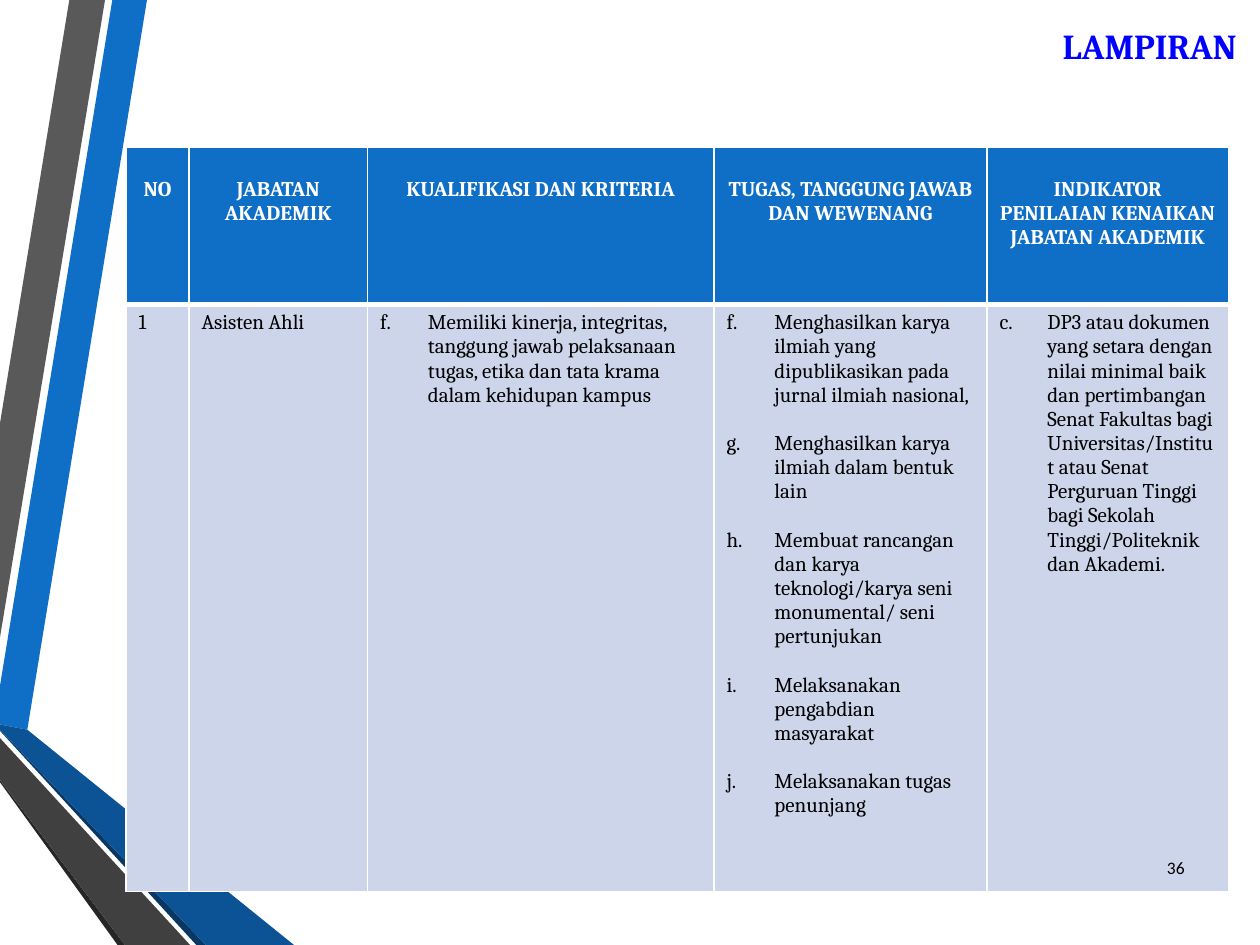
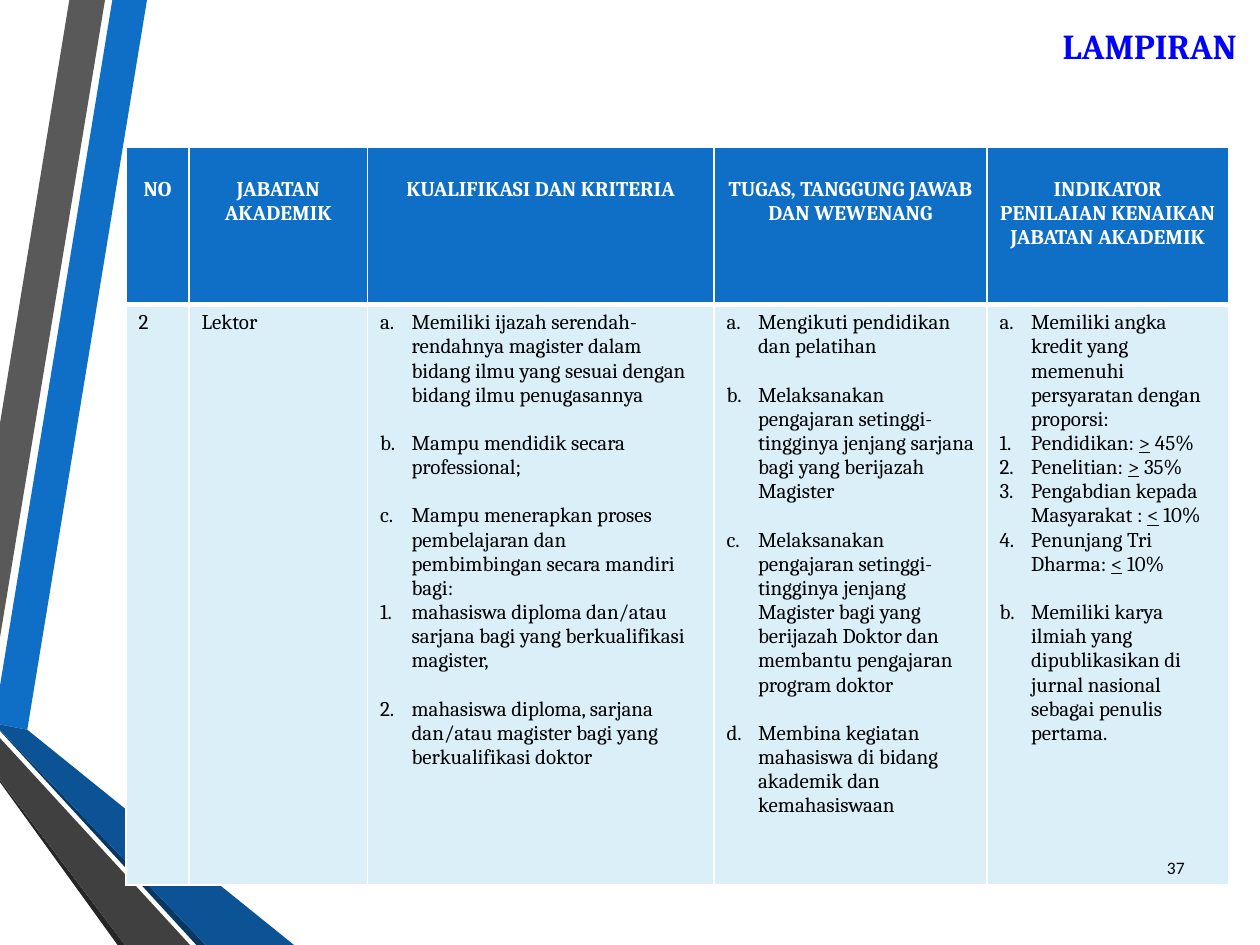
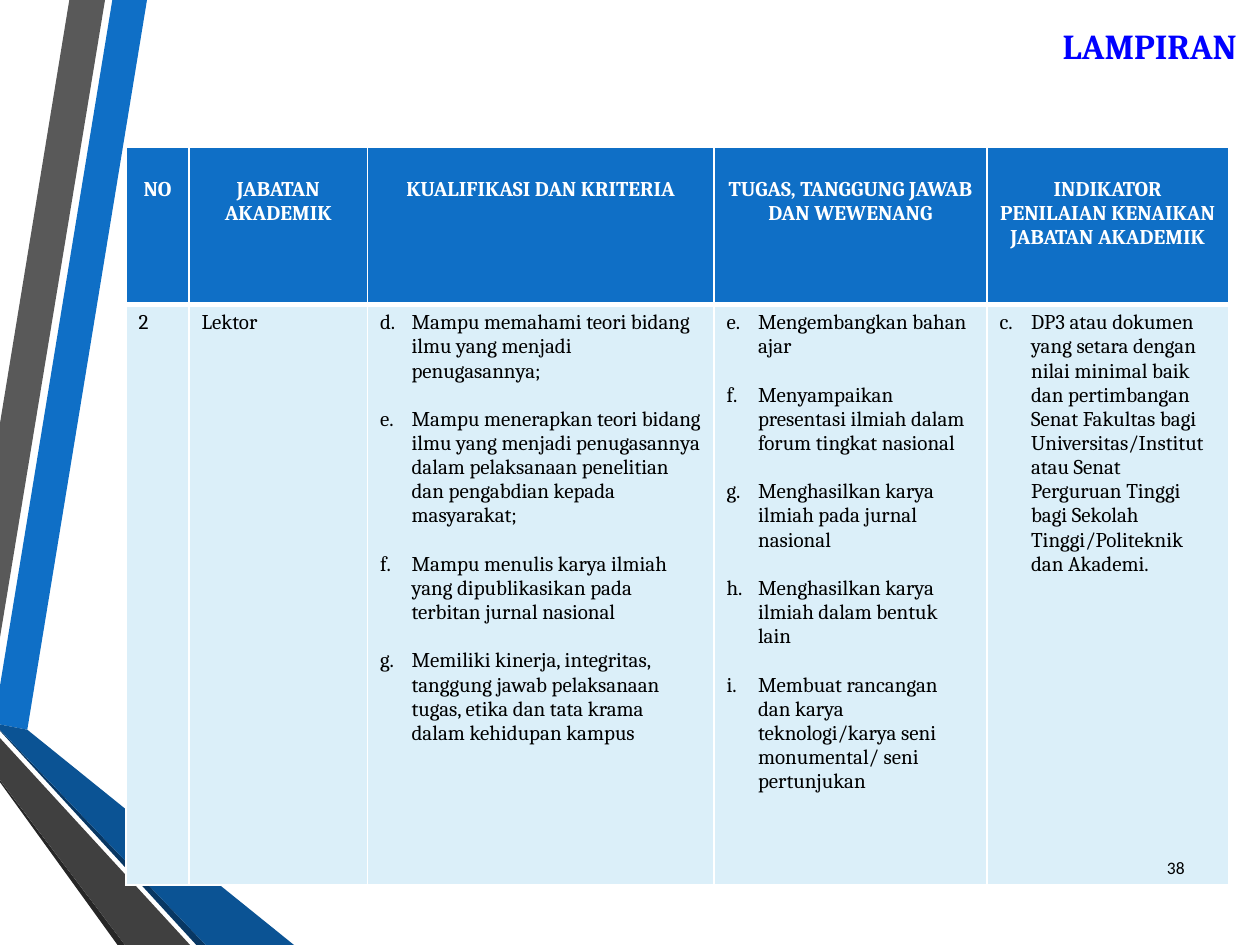
from dataclasses import dataclass

from lxml import etree
from pptx import Presentation, util as u
from pptx.dml.color import RGBColor
from pptx.enum import text
from pptx.oxml import ns

# Grid: 120 columns by 90 rows
COLUMNS, ROWS = 120, 90
SERIF, SANS = "Cambria", "Calibri"
BLUE, WHITE, BLACK, TITLE_BLUE = "0F6FC6", "FFFFFF", "000000", "0000FF"
ASSISTANT_FILL, LECTURER_FILL = "CCD5EA", "DBEFF9"
LINE_GAP = u.Pt(13.8)
CELL_MARGIN, HEADER_MARGIN = u.Inches(0.05), u.Inches(0.24)
CENTER, RIGHT = text.PP_ALIGN.CENTER, text.PP_ALIGN.RIGHT

# Ribbons on the left edge: colour and outline in grid units
RIBBONS = [
    (BLUE, [(0, 65.3), (0, 69), (2.6, 69.5), (14, 0), (10.7, 0)]),
    ("595959", [(10, 0), (6.6, 0), (0, 40.3), (0, 60.7)]),
    ("262626", [(0, 74.3), (0, 74.5), (11.2, 90), (11.9, 90)]),
    ("083763", [(0, 69.5), (0, 69.6), (18.7, 90), (19.6, 90)]),
    ("0B5394", [(0, 69.5), (19.6, 90), (28, 90), (2.6, 69.5), (0, 69)]),
    ("404040", [(0, 74.3), (11.9, 90), (18.1, 90), (0, 70.3)]),
]

TABLE_LEFT, TABLE_TOP, HEADER_ROWS = 12, 14, 15
TABLE_COLUMNS = [6, 17, 33, 26, 23]
HEADERS = [
    "NO", "JABATAN AKADEMIK", "KUALIFIKASI DAN KRITERIA",
    "TUGAS, TANGGUNG JAWAB DAN WEWENANG",
    "INDIKATOR PENILAIAN KENAIKAN JABATAN AKADEMIK",
]


@dataclass
class Numbered:
    """A numbered list; text between underscores is underlined."""
    items: list
    start: int = 1
    scheme: str = "alphaLcPeriod"
    apart: bool = True
    gap_before: bool = False


def color(value):
    return RGBColor.from_string(value)


class Deck:
    def __init__(self):
        self.presentation = Presentation()
        self.presentation.slide_width = u.Inches(10)
        self.presentation.slide_height = u.Inches(7.5)
        self.slide = None

    def x(self, columns):
        return round(self.presentation.slide_width * columns / COLUMNS)

    def y(self, rows):
        return round(self.presentation.slide_height * rows / ROWS)

    def place(self, shape, left, top, width, height):
        shape.left, shape.top = self.x(left), self.y(top)
        shape.width, shape.height = self.x(width), self.y(height)

    def format(self, paragraph, size, fill, font=SERIF, bold=False, align=None):
        paragraph.alignment = align
        for run in paragraph.runs:
            run.font.name, run.font.size, run.font.bold = font, u.Pt(size), bold
            run.font.color.rgb = color(fill)

    def add_slide(self, title):
        layout = self.presentation.slide_layouts[5]
        self.slide = self.presentation.slides.add_slide(layout)
        for fill, points in RIBBONS:
            self.ribbon(fill, points)
        shape = self.slide.shapes.title
        self.place(shape, 31, 1.7, 88, 5.3)
        frame = shape.text_frame
        frame.text = title
        frame.vertical_anchor = text.MSO_ANCHOR.TOP
        frame.auto_size = text.MSO_AUTO_SIZE.NONE
        self.format(frame.paragraphs[0], 20, TITLE_BLUE, bold=True, align=RIGHT)

    def ribbon(self, fill, points):
        corners = [(self.x(left), self.y(top)) for left, top in points]
        builder = self.slide.shapes.build_freeform(*corners[0])
        builder.add_line_segments(corners[1:], close=True)
        shape = builder.convert_to_shape()
        shape.shadow.inherit = False
        shape.fill.solid()
        shape.fill.fore_color.rgb = color(fill)
        shape.line.fill.background()

    def page_number(self, number):
        shape = self.slide.shapes.add_textbox(0, 0, 0, 0)
        self.place(shape, 108.4, 80.2, 5.6, 4.8)
        frame = shape.text_frame
        frame.text = str(number)
        frame.word_wrap = True
        frame.vertical_anchor = text.MSO_ANCHOR.MIDDLE
        self.format(frame.paragraphs[0], 10, BLACK, font=SANS, align=RIGHT)

    def style_cell(self, cell, fill, top=1, bottom=1):
        properties = cell._tc.get_or_add_tcPr()
        for side, width in zip("LRTB", (1, 1, top, bottom)):
            line = etree.SubElement(properties, ns.qn(f"a:ln{side}"), w=str(u.Pt(width)))
            solid = etree.SubElement(line, ns.qn("a:solidFill"))
            etree.SubElement(solid, ns.qn("a:srgbClr"), val=WHITE)
        cell.fill.solid()
        cell.fill.fore_color.rgb = color(fill)

    def numbered_cell(self, cell, lists, indent):
        entries = [(block, index, item) for block in lists
                   for index, item in enumerate(block.items)]
        frame = cell.text_frame
        for position, (block, index, item) in enumerate(entries):
            paragraph = frame.add_paragraph() if position else frame.paragraphs[0]
            for part_index, part in enumerate(item.split("_")):
                run = paragraph.add_run()
                run.text = part
                run.font.underline = part_index % 2 == 1
            self.format(paragraph, 12, BLACK)
            if block.apart if index else block.gap_before:
                paragraph.space_before = LINE_GAP
            properties = paragraph._p.get_or_add_pPr()
            properties.set("marL", str(u.Inches(indent)))
            properties.set("indent", str(-u.Inches(indent)))
            number = etree.SubElement(properties, ns.qn("a:buAutoNum"), type=block.scheme)
            if block.start > 1:
                number.set("startAt", str(block.start))

    def rank_table(self, rank, fill, body_rows, indent, lists):
        frame = self.slide.shapes.add_table(
            2, len(HEADERS), self.x(TABLE_LEFT), self.y(TABLE_TOP),
            self.x(sum(TABLE_COLUMNS)), self.y(HEADER_ROWS + body_rows))
        table = frame.table
        table.horz_banding = False
        for column, width in zip(table.columns, TABLE_COLUMNS):
            column.width = self.x(width)
        for row, height in zip(table.rows, (HEADER_ROWS, body_rows)):
            row.height = self.y(height)
        for index, header in enumerate(HEADERS):
            head, body = table.cell(0, index), table.cell(1, index)
            head.text = header
            head.margin_top, body.margin_top = HEADER_MARGIN, CELL_MARGIN
            self.format(head.text_frame.paragraphs[0], 12, WHITE, bold=True, align=CENTER)
            self.style_cell(head, BLUE, bottom=3)
            self.style_cell(body, fill, top=3)
            if index < len(rank):
                body.text = rank[index]
                self.format(body.text_frame.paragraphs[0], 12, BLACK)
            else:
                self.numbered_cell(body, lists[index - len(rank)], indent)


# Wording used for more than one rank
CONDUCT = ("Memiliki kinerja, integritas, tanggung jawab pelaksanaan tugas, "
           "etika dan tata krama dalam kehidupan kampus")
OTHER_WORK = "Menghasilkan karya ilmiah dalam bentuk lain"
DESIGN_WORK = ("Membuat rancangan dan karya teknologi/karya seni monumental/ "
               "seni pertunjukan")
APPRAISAL = Numbered([
    "DP3 atau dokumen yang setara dengan nilai minimal baik dan pertimbangan "
    "Senat Fakultas bagi Universitas/Institut atau Senat Perguruan Tinggi bagi "
    "Sekolah Tinggi/Politeknik dan Akademi."], start=3)

# One entry per slide: rank, fill, body height, indent, three columns of lists
ASSISTANT, LECTURER = ("1", "Asisten Ahli"), ("2", "Lektor")
PAGES = [
    (ASSISTANT, ASSISTANT_FILL, 55.9, 0.38, [
        [Numbered([CONDUCT], start=6)],
        [Numbered([
            "Menghasilkan karya ilmiah yang dipublikasikan pada jurnal ilmiah nasional,",
            OTHER_WORK,
            DESIGN_WORK,
            "Melaksanakan pengabdian masyarakat",
            "Melaksanakan tugas penunjang"], start=6)],
        [APPRAISAL],
    ]),
    (LECTURER, LECTURER_FILL, 55.3, 0.25, [
        [Numbered([
            "Memiliki ijazah serendah-rendahnya magister dalam bidang ilmu yang "
            "sesuai dengan bidang ilmu penugasannya",
            "Mampu mendidik secara professional;",
            "Mampu menerapkan proses pembelajaran dan pembimbingan secara mandiri bagi:"]),
         Numbered([
             "mahasiswa diploma dan/atau sarjana bagi yang berkualifikasi magister,",
             "mahasiswa diploma, sarjana dan/atau magister bagi yang berkualifikasi doktor"],
             scheme="arabicPeriod")],
        [Numbered([
            "Mengikuti pendidikan dan pelatihan",
            "Melaksanakan pengajaran setinggi-tingginya jenjang sarjana bagi yang "
            "berijazah Magister",
            "Melaksanakan pengajaran setinggi-tingginya jenjang Magister bagi yang "
            "berijazah Doktor dan membantu pengajaran program doktor",
            "Membina kegiatan mahasiswa di bidang akademik dan kemahasiswaan"])],
        [Numbered(["Memiliki angka kredit yang memenuhi persyaratan dengan proporsi:"]),
         Numbered([
             "Pendidikan: _>_ 45%",
             "Penelitian: _>_ 35%",
             "Pengabdian kepada Masyarakat : _<_ 10%",
             "Penunjang Tri Dharma: _<_ 10%"], scheme="arabicPeriod", apart=False),
         Numbered([
             "Memiliki karya ilmiah yang dipublikasikan di jurnal nasional sebagai "
             "penulis pertama."], start=2, gap_before=True)],
    ]),
    (LECTURER, LECTURER_FILL, 55.3, 0.25, [
        [Numbered([
            "Mampu memahami teori bidang ilmu yang menjadi penugasannya;",
            "Mampu menerapkan teori bidang ilmu yang menjadi penugasannya dalam "
            "pelaksanaan penelitian dan pengabdian kepada masyarakat;",
            "Mampu menulis karya ilmiah yang dipublikasikan pada terbitan jurnal nasional",
            CONDUCT], start=4)],
        [Numbered([
            "Mengembangkan bahan ajar",
            "Menyampaikan presentasi ilmiah dalam forum tingkat nasional",
            "Menghasilkan karya ilmiah pada jurnal nasional",
            OTHER_WORK,
            DESIGN_WORK], start=5)],
        [APPRAISAL],
    ]),
]


def main():
    deck = Deck()
    for number, page in enumerate(PAGES, start=36):
        deck.add_slide("LAMPIRAN")
        deck.rank_table(*page)
        deck.page_number(number)
    deck.presentation.save("out.pptx")


if __name__ == "__main__":
    main()
